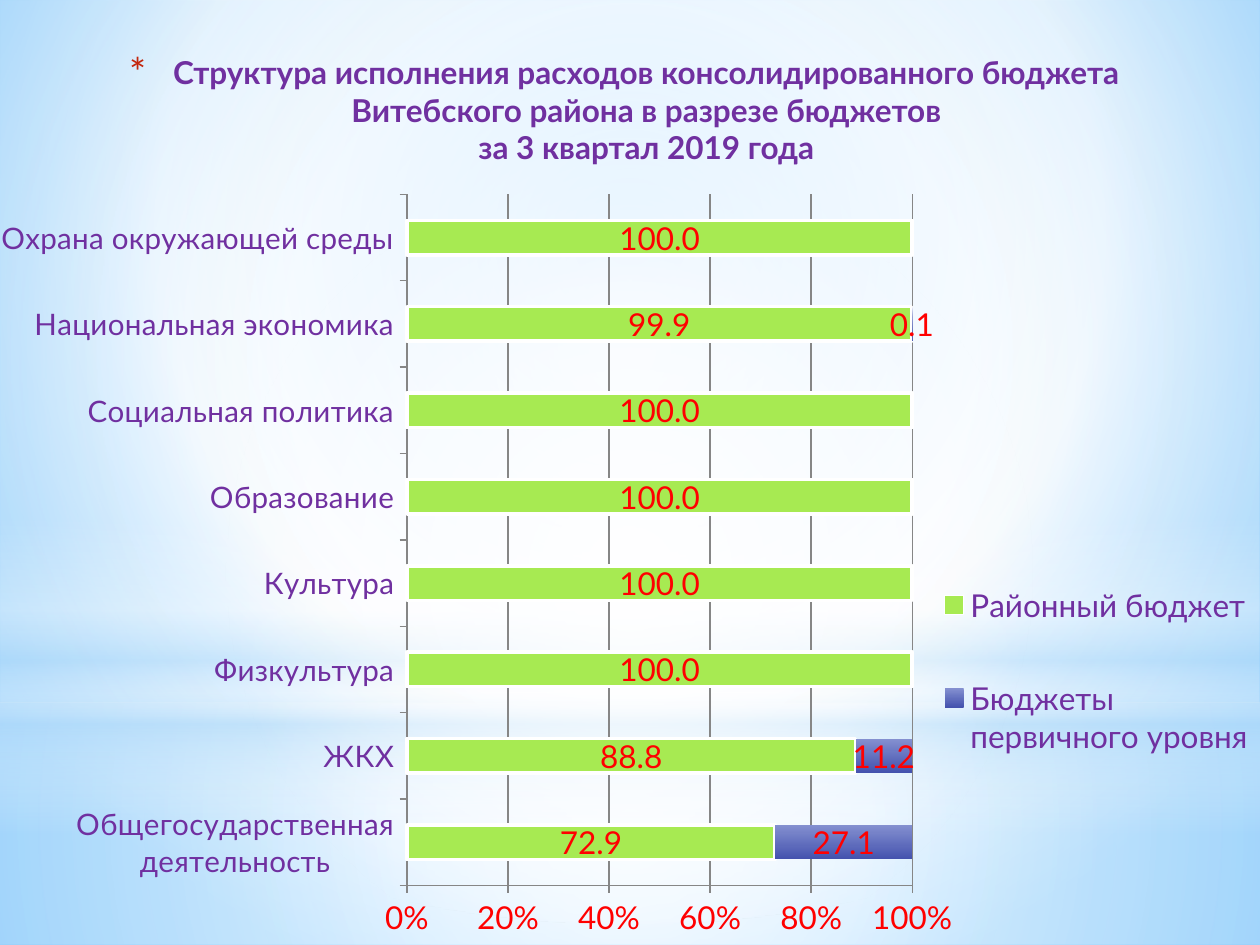
import pptx
import pptx.chart.data
import pptx.dml.color
import pptx.enum.chart
import pptx.enum.shapes
import pptx.enum.text
import pptx.oxml
import pptx.oxml.ns
import pptx.util

Cm, Pt = pptx.util.Cm, pptx.util.Pt
qn, nsdecls = pptx.oxml.ns.qn, pptx.oxml.ns.nsdecls
ec = pptx.enum.chart
PURPLE, RED, GRAY, WHITE = "7030A0", "FF0000", "868686", "FFFFFF"


def rgb(c):
    return pptx.dml.color.RGBColor.from_string(c)


def gradient(owner, stops, to=None):
    gs = "".join(
        f'<a:gs pos="{pos * 1000}"><a:srgbClr val="{c}">'
        f'<a:alpha val="{alpha * 1000}"/></a:srgbClr></a:gs>'
        for pos, c, alpha in stops)
    if to:
        sides = " ".join(f'{k}="{v * 1000}"' for k, v in zip("ltrb", to))
        way = f'<a:path path="circle"><a:fillToRect {sides}/></a:path>'
    else:
        way = '<a:lin ang="5400000" scaled="0"/>'
    old = owner.find(".//" + qn("a:solidFill"))
    old.getparent().replace(old, pptx.oxml.parse_xml(
        f'<a:gradFill {nsdecls("a")} rotWithShape="1"><a:gsLst>{gs}</a:gsLst>{way}</a:gradFill>'))


prs = pptx.Presentation()
prs.slide_width, prs.slide_height = Cm(25.4), Cm(19.05)
s = prs.slides.add_slide(prs.slide_layouts[6])

s.background.fill.solid()
gradient(s._element, [(0, "9ED5FF", 100), (60, WHITE, 100), (100, "5BB9FF", 100)], (20, 10, 20, 60))

CENTER = (50, 50, 50, 50)
RECT = pptx.enum.shapes.MSO_SHAPE.RECTANGLE
OVAL = pptx.enum.shapes.MSO_SHAPE.OVAL
for kind, top, height, stops, to in [
    (RECT, 14.17, 4.88, [(0, WHITE, 91), (37, WHITE, 76), (100, "B4DCFA", 79)], CENTER),
    (RECT, 0, 14.17, [(0, WHITE, 89), (48, WHITE, 62), (100, "B4DCFA", 79)], CENTER),
    (RECT, 10.46, 6.35, [(0, WHITE, 0), (29, WHITE, 30), (45, "B4DCFA", 40),
                         (55, WHITE, 26), (65, "B4DCFA", 60), (100, WHITE, 0)], None),
    (OVAL, 4.45, 14.17, [(0, WHITE, 100), (56, WHITE, 0)], CENTER),
]:
    sp = s.shapes.add_shape(kind, 0, Cm(top), prs.slide_width, Cm(height))
    sp.shadow.inherit = False
    sp.line.fill.background()
    sp.fill.solid()
    gradient(sp._element, stops, to)

tf = s.shapes.add_textbox(Cm(0.89), Cm(0.91), Cm(23.39), Cm(2.6)).text_frame
tf.word_wrap = True
tf.vertical_anchor = pptx.enum.text.MSO_ANCHOR.MIDDLE
p = tf.paragraphs[0]
p.text = ("Структура исполнения расходов консолидированного бюджета\v"
          "Витебского района в разрезе бюджетов\vза 3 квартал 2019 года")
p.alignment = pptx.enum.text.PP_ALIGN.CENTER
for r in p.runs:
    for k, v in {"size": Pt(18), "name": "Lato", "bold": True}.items():
        setattr(r.font, k, v)
    r.font.color.rgb = rgb(PURPLE)
pPr = p._p.get_or_add_pPr()
pPr.set("marL", str(Cm(0.89)))
pPr.set("indent", str(-Cm(0.89)))
for bullet in ['buClr {}><a:srgbClr val="C3260C"/></a:buClr>', 'buSzPct {} val="128000"/>',
               'buFont {} typeface="Lato"/>', 'buChar {} char="*"/>']:
    pPr.append(pptx.oxml.parse_xml("<a:" + bullet.format(nsdecls("a"))))

cd = pptx.chart.data.CategoryChartData(number_format="0.0")
cd.categories = ["Общегосударственная деятельность", "ЖКХ", "Физкультура", "Культура",
                 "Образование", "Социальная политика", "Национальная экономика",
                 "Охрана окружающей среды"]
cd.add_series("Районный бюджет", [72.9, 88.8, 100, 100, 100, 100, 99.9, 100])
cd.add_series("Бюджеты первичного уровня", [27.1, 11.2, None, None, None, None, 0.1, None])
chart = s.shapes.add_chart(ec.XL_CHART_TYPE.BAR_STACKED_100, 0, Cm(3.89),
                           Cm(25.4), Cm(15.16), cd).chart
chart.has_title = False
chart.has_legend = True
chart.legend.position = ec.XL_LEGEND_POSITION.RIGHT
chart.legend.include_in_layout = False
cat, val = chart.category_axis, chart.value_axis
for font, size, c in [(chart.font, 18, RED), (cat.tick_labels.font, 16.9, PURPLE),
                      (val.tick_labels.font, 18, RED), (chart.legend.font, 18, PURPLE)]:
    for k, v in {"size": Pt(size), "name": "Lato", "bold": False}.items():
        setattr(font, k, v)
    font.color.rgb = rgb(c)

val.has_major_gridlines = True
cat.has_major_gridlines = False
for k, v in {"minimum_scale": 0, "maximum_scale": 1, "major_unit": 0.2}.items():
    setattr(val, k, v)
val.tick_labels.number_format = "0%"
val.tick_labels.number_format_is_linked = False
for axis in (cat, val):
    axis.major_tick_mark = ec.XL_TICK_MARK.OUTSIDE
for part in (cat, val, val.major_gridlines):
    part.format.line.color.rgb = rgb(GRAY)
    part.format.line.width = Pt(0.75)

plot = chart.plots[0]
for k, v in {"gap_width": 150, "overlap": 100, "vary_by_categories": False}.items():
    setattr(plot, k, v)
district, primary = plot.series
for ser in plot.series:
    ser.format.fill.solid()
    ser.format.fill.fore_color.rgb = rgb("A7EA52")
    labels = ser.data_labels
    for k, v in {"show_value": True, "number_format": "0.0",
                 "number_format_is_linked": False}.items():
        setattr(labels, k, v)
district.format.line.color.rgb = rgb(WHITE)
district.format.line.width = Pt(2)
gradient(primary._element, [(0, "8490D0", 100), (100, "4452AE", 100)])

for owner, index, target, box in [
    (chart._chartSpace.chart.plotArea, 0, '<c:layoutTarget val="inner"/>', (0.323, 0.002, 0.401, 0.919)),
    (chart.legend._element, 1, "", (0.74, 0.45, 0.26, 0.37)),
]:
    for old in owner.findall(qn("c:layout")):
        owner.remove(old)
    sizes = "".join(f'<c:{k} val="{v}"/>' for k, v in zip("xywh", box))
    owner.insert(index, pptx.oxml.parse_xml(
        f'<c:layout {nsdecls("c")}><c:manualLayout>{target}<c:xMode val="edge"/>'
        f'<c:yMode val="edge"/>{sizes}</c:manualLayout></c:layout>'))

prs.save("out.pptx")
